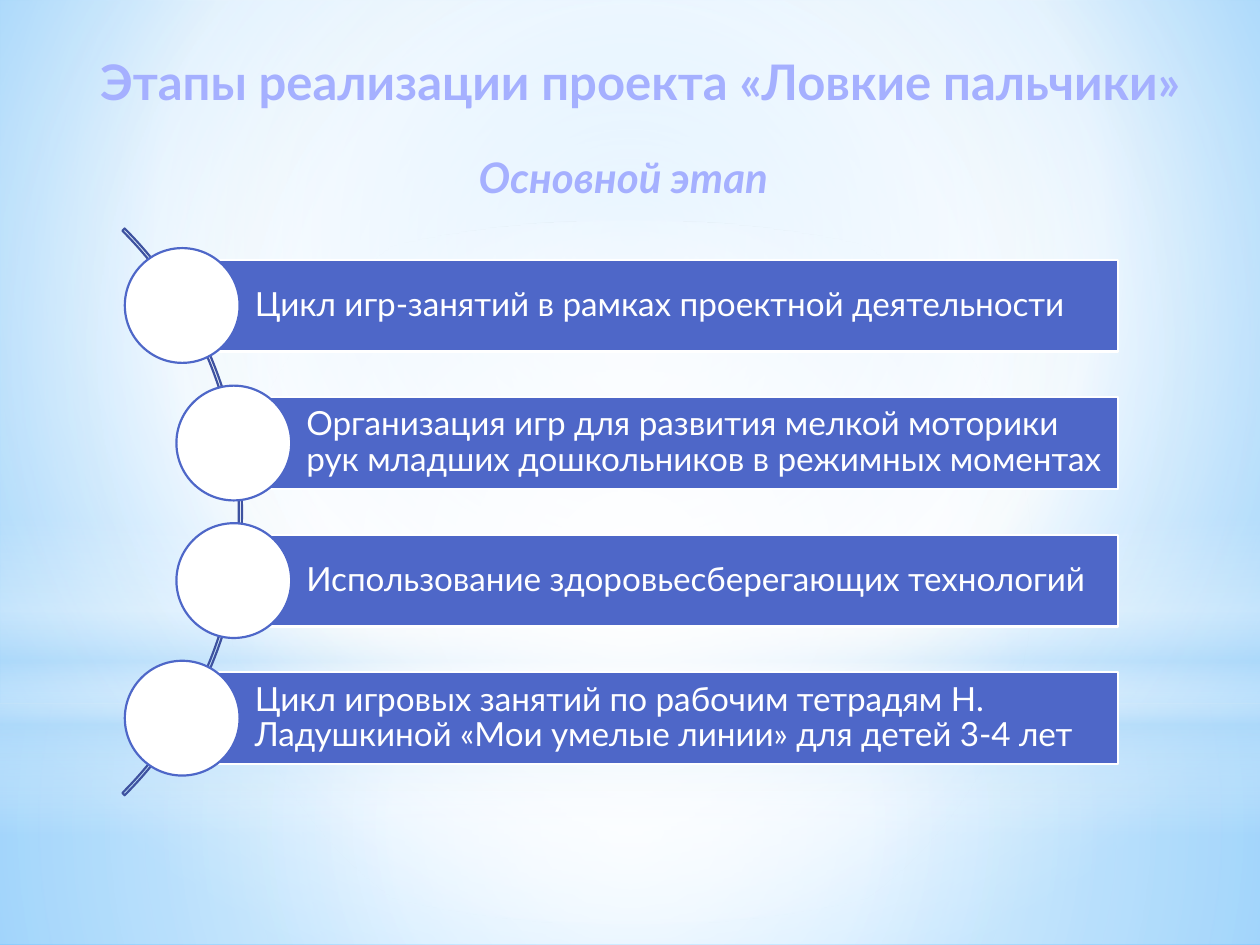
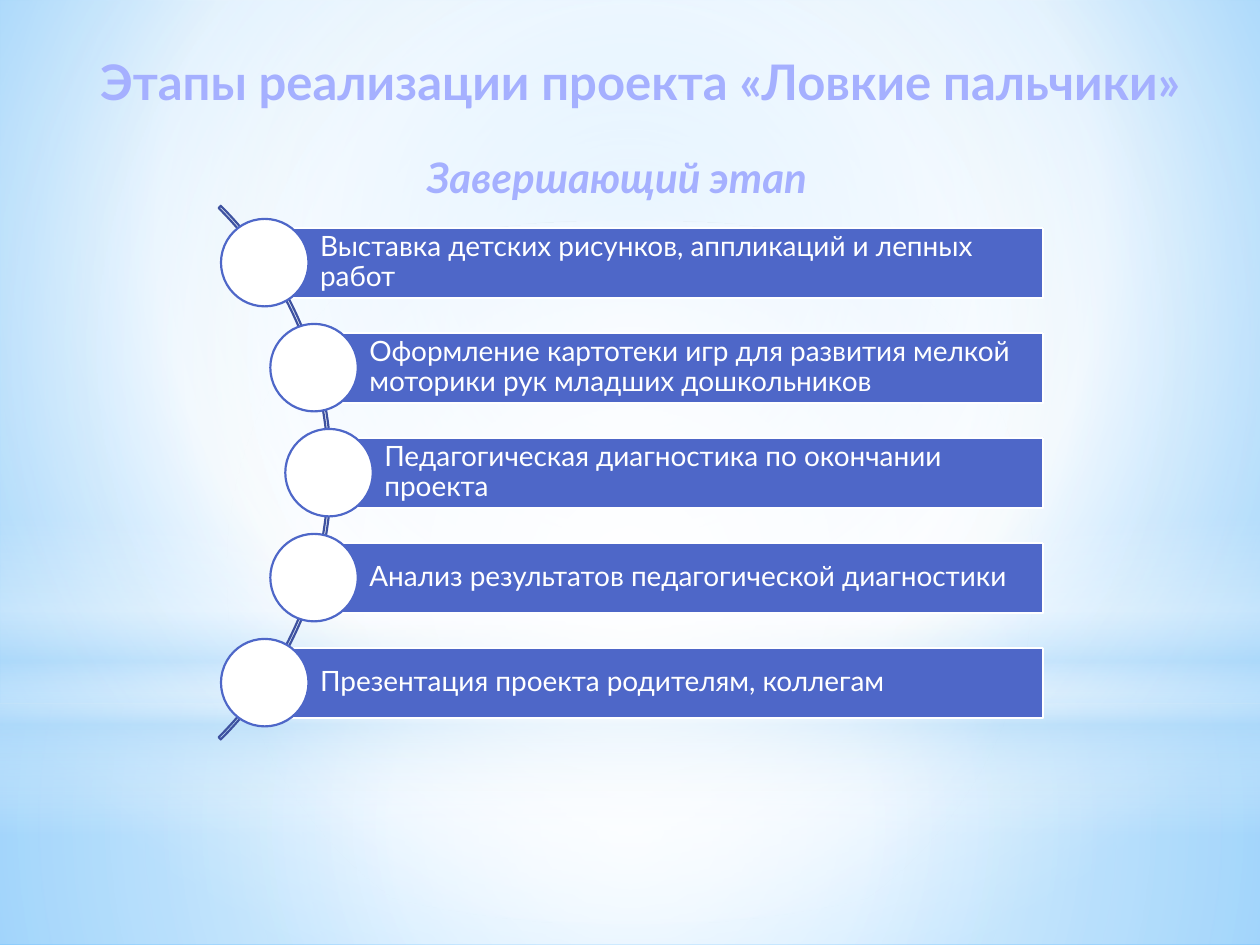
"""Build two slides on the stages of a finger-skills project, each with a curved list."""
import math
from dataclasses import dataclass
from typing import NamedTuple

from lxml import etree
from pptx import Presentation
from pptx import util as u
from pptx.dml import color, fill as fills
from pptx.enum import shapes, text
from pptx.oxml import ns
from pptx.shapes import autoshape
from pptx.slide import Slide


class Box(NamedTuple):
    """A frame in points."""
    left: float
    top: float
    width: float
    height: float


class Stop(NamedTuple):
    """A gradient stop; position and opacity are in percent."""
    position: int
    color: str
    opacity: int = 100


@dataclass(frozen=True)
class Gradient:
    """A linear gradient, or a circular one when a focus is given."""
    stops: tuple[Stop, ...]
    focus: tuple[int, ...] = ()
    angle: int = 90


@dataclass(frozen=True)
class Layer:
    """A translucent shape behind the content."""
    box: Box
    gradient: Gradient
    kind: shapes.MSO_SHAPE = shapes.MSO_SHAPE.RECTANGLE


@dataclass(frozen=True)
class CurvedList:
    """Bars whose round markers follow an arc."""
    items: tuple[str, ...]
    center_x: float
    center_y: float
    radius: float
    pitch: float
    marker: float
    right: float
    text_size: int


@dataclass(frozen=True)
class Stage:
    """The content of one slide."""
    subtitle: str
    subtitle_box: Box
    steps: CurvedList


@dataclass(frozen=True)
class Theme:
    """Colours, type sizes and line widths."""
    font: str = "Lato"
    white: str = "FFFFFF"
    accent: str = "4E67C8"
    arc: str = "3E52A0"
    text_outline: str = "445EC3"
    title_size: int = 28
    subtitle_size: int = 24
    line: float = 1.25
    outline: float = 0.83
    heading: Gradient = Gradient((
        Stop(0, "BCC4FF"), Stop(9, "A5B0FF"), Stop(50, "001C8A"),
        Stop(79, "A5B0FF"), Stop(100, "BCC4FF")))
    background: Gradient = Gradient(
        (Stop(0, "9ED5FF"), Stop(60, "FFFFFF"), Stop(100, "5BB9FF")), (20, 10, 20, 60))


THEME = Theme()
WIDTH, HEIGHT = 720, 540
HORIZON = 402
CENTER = (50, 50, 50, 50)
MIST = "B4DCFA"
TITLE = "Этапы реализации проекта «Ловкие пальчики»"
TITLE_BOX = Box(32.4, 26, 666.7, 41)

LAYERS = (
    Layer(Box(0, HORIZON, WIDTH, HEIGHT - HORIZON), Gradient(
        (Stop(0, THEME.white, 91), Stop(37, THEME.white, 76), Stop(100, MIST, 79)), CENTER)),
    Layer(Box(0, 0, WIDTH, HORIZON), Gradient(
        (Stop(0, THEME.white, 89), Stop(48, THEME.white, 62), Stop(100, MIST, 79)), CENTER)),
    Layer(Box(0, 296.6, WIDTH, 180), Gradient(
        (Stop(0, THEME.white, 0), Stop(29, THEME.white, 30), Stop(45, MIST, 40),
         Stop(55, THEME.white, 26), Stop(65, MIST, 60), Stop(100, THEME.white, 0)))),
    Layer(Box(0, 126, WIDTH, HORIZON), Gradient(
        (Stop(0, THEME.white), Stop(56, THEME.white, 0)), CENTER), shapes.MSO_SHAPE.OVAL),
)

STAGES = (
    Stage("Основной этап", Box(266.4, 82.8, 198, 36), CurvedList(
        ("Цикл игр-занятий в рамках проектной деятельности",
         "Организация игр для развития мелкой моторики рук младших дошкольников в режимных моментах",
         "Использование здоровьесберегающих технологий",
         "Цикл игровых занятий по рабочим тетрадям Н. Ладушкиной «Мои умелые линии» "
         "для детей 3-4 лет"),
        center_x=-90.7, center_y=292.5, radius=229, pitch=78.6, marker=65.6,
        right=638.9, text_size=19)),
    Stage("Завершающий этап", Box(236.9, 82.8, 257, 36), CurvedList(
        ("Выставка детских рисунков, аппликаций и лепных работ",
         "Оформление картотеки игр для развития мелкой моторики рук младших дошкольников",
         "Педагогическая диагностика по окончании проекта",
         "Анализ результатов педагогической диагностики",
         "Презентация проекта родителям, коллегам"),
        center_x=-26.3, center_y=270.1, radius=215.6, pitch=60, marker=50,
        right=596.2, text_size=16)),
)


def points(box: Box) -> list[u.Pt]:
    """Convert a frame to lengths."""
    return [u.Pt(value) for value in box]


def rgb(value: str) -> color.RGBColor:
    """Convert a hexadecimal colour."""
    return color.RGBColor.from_string(value)


def add_node(parent: etree._Element, tag: str, **attributes: object) -> etree._Element:
    """Append a DrawingML element."""
    values = {name: str(value) for name, value in attributes.items()}
    return etree.SubElement(parent, ns.qn(f"a:{tag}"), values)


def set_gradient(fill: fills.FillFormat, owner: etree._Element, gradient: Gradient) -> None:
    """Replace a fill with a gradient."""
    fill.gradient()
    node = owner.find(f".//{ns.qn('a:gradFill')}")
    for child in list(node):
        node.remove(child)
    stop_list = add_node(node, "gsLst")
    for stop in gradient.stops:
        stop_node = add_node(stop_list, "gs", pos=stop.position * 1000)
        color_node = add_node(stop_node, "srgbClr", val=stop.color)
        if stop.opacity < 100:
            add_node(color_node, "alpha", val=stop.opacity * 1000)
    if gradient.focus:
        circle = add_node(node, "path", path="circle")
        sides = {side: value * 1000 for side, value in zip("ltrb", gradient.focus)}
        add_node(circle, "fillToRect", **sides)
    else:
        add_node(node, "lin", ang=gradient.angle * 60000, scaled=0)


def add_shape(slide: Slide, kind: shapes.MSO_SHAPE, box: Box,
              fill: str | None = None, line: str | None = None) -> autoshape.Shape:
    """Add a flat preset shape."""
    shape = slide.shapes.add_shape(kind, *points(box))
    shape.shadow.inherit = False
    if fill:
        shape.fill.solid()
        shape.fill.fore_color.rgb = rgb(fill)
    else:
        shape.fill.background()
    if line:
        shape.line.color.rgb = rgb(line)
        shape.line.width = u.Pt(THEME.line)
    else:
        shape.line.fill.background()
    return shape


def add_backdrop(slide: Slide) -> None:
    """Draw the shared sky background."""
    set_gradient(slide.background.fill, slide.element, THEME.background)
    for layer in LAYERS:
        shape = add_shape(slide, layer.kind, layer.box)
        set_gradient(shape.fill, shape.element, layer.gradient)


def add_heading(slide: Slide, words: str, box: Box, size: int,
                alignment: text.PP_ALIGN, italic: bool = False) -> None:
    """Add a bold heading with gradient letters."""
    shape = slide.shapes.add_textbox(*points(box))
    shape.text_frame.word_wrap = True
    shape.text_frame.text = words
    paragraph = shape.text_frame.paragraphs[0]
    paragraph.alignment = alignment
    font = paragraph.runs[0].font
    font.name, font.size = THEME.font, u.Pt(size)
    font.bold, font.italic = True, italic
    properties = shape.element.find(f".//{ns.qn('a:rPr')}")
    set_gradient(font.fill, properties, THEME.heading)
    outline = add_node(properties, "ln", w=u.Pt(THEME.outline))
    add_node(add_node(outline, "solidFill"), "srgbClr", val=THEME.text_outline)
    properties.insert(0, outline)


def add_bar(slide: Slide, words: str, box: Box, size: int) -> None:
    """Add a bar with its text clear of the marker."""
    bar = add_shape(slide, shapes.MSO_SHAPE.RECTANGLE, box, THEME.accent, THEME.white)
    frame = bar.text_frame
    frame.word_wrap = True
    frame.vertical_anchor = text.MSO_ANCHOR.MIDDLE
    frame.margin_left = u.Pt(box.height * 0.79)
    frame.margin_top = frame.margin_right = frame.margin_bottom = u.Pt(size * 0.19)
    frame.text = words
    paragraph = frame.paragraphs[0]
    paragraph.alignment = text.PP_ALIGN.LEFT
    paragraph.line_spacing = 0.9
    font = paragraph.runs[0].font
    font.name, font.size = THEME.font, u.Pt(size)
    font.color.rgb = rgb(THEME.white)


def add_curved_list(slide: Slide, steps: CurvedList) -> None:
    """Draw the arc, then a bar and a marker for each step."""
    diameter = 2 * steps.radius
    arc = add_shape(slide, shapes.MSO_SHAPE.BLOCK_ARC, Box(
        steps.center_x - steps.radius, steps.center_y - steps.radius, diameter, diameter),
        line=THEME.arc)
    for index, value in enumerate((189, 27, 0.004)):
        arc.adjustments[index] = value
    track = steps.radius - THEME.line
    bar_height = steps.marker * 0.8
    for index, words in enumerate(steps.items):
        offset = (index - (len(steps.items) - 1) / 2) * steps.pitch
        x = steps.center_x + math.sqrt(track ** 2 - offset ** 2)
        y = steps.center_y + offset
        add_bar(slide, words, Box(x, y - bar_height / 2, steps.right - x, bar_height),
                steps.text_size)
        add_shape(slide, shapes.MSO_SHAPE.OVAL, Box(
            x - steps.marker / 2, y - steps.marker / 2, steps.marker, steps.marker),
            THEME.white, THEME.accent)


def main() -> None:
    """Build and save the presentation."""
    presentation = Presentation()
    presentation.slide_width, presentation.slide_height = u.Pt(WIDTH), u.Pt(HEIGHT)
    for stage in STAGES:
        slide = presentation.slides.add_slide(presentation.slide_layouts[6])
        add_backdrop(slide)
        add_heading(slide, TITLE, TITLE_BOX, THEME.title_size, text.PP_ALIGN.CENTER)
        add_heading(slide, stage.subtitle, stage.subtitle_box, THEME.subtitle_size,
                    text.PP_ALIGN.JUSTIFY, italic=True)
        add_curved_list(slide, stage.steps)
    presentation.save("out.pptx")


if __name__ == "__main__":
    main()
